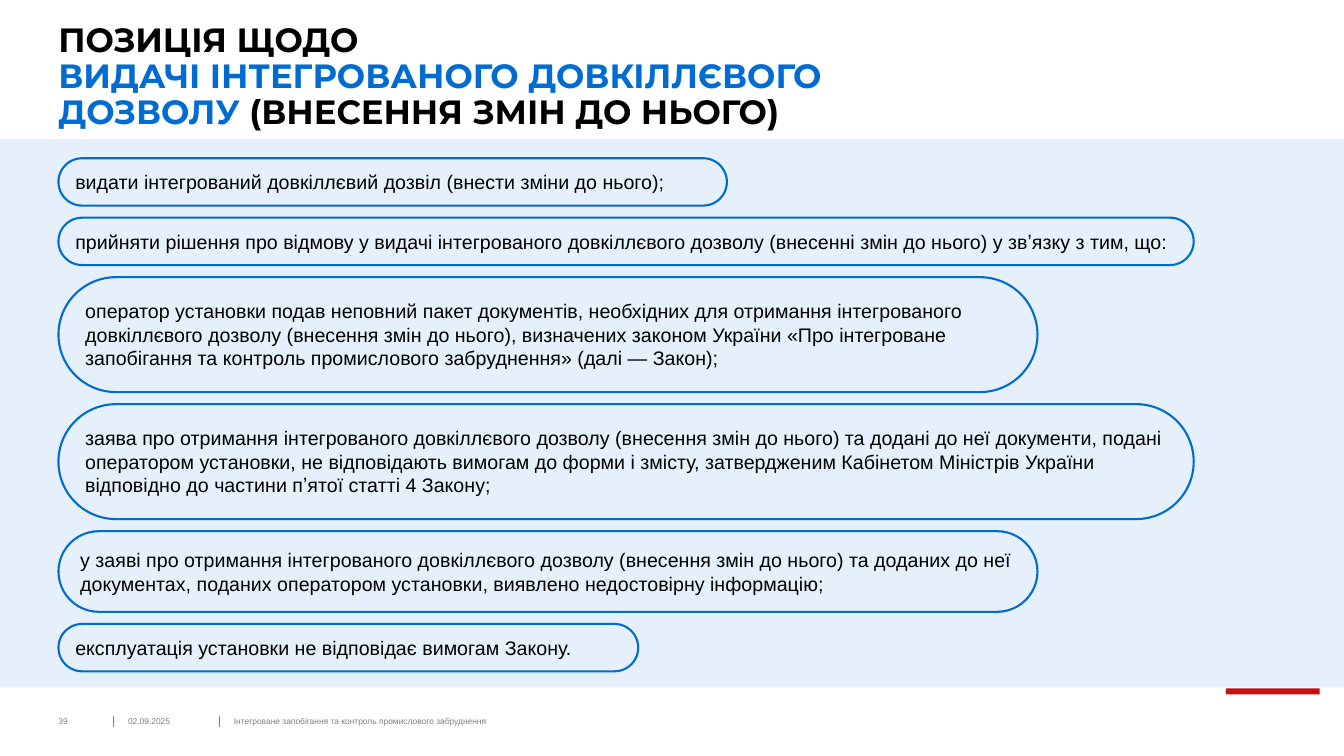
import pptx
import pptx.util
import pptx.dml.color
import pptx.enum.shapes
import pptx.enum.text
from dataclasses import dataclass
from lxml import etree
from pptx.util import Inches, Pt

SHAPE = pptx.enum.shapes.MSO_SHAPE
ANCHOR = pptx.enum.text.MSO_ANCHOR
ALIGN = pptx.enum.text.PP_ALIGN


@dataclass(frozen=True)
class Theme:
    """Colours, fonts and type sizes of the slide."""
    ink: str = "000000"
    blue: str = "006CD2"
    pale: str = "E5F0FA"
    red: str = "C80F0F"
    grey: str = "7F7F7F"
    heading_font: str = "Montserrat"
    body_font: str = "Arial"
    heading_size: int = 24
    body_size: int = 14
    footer_size: int = 6


THEME = Theme()
MARGIN = 0.58
BAND = (0, 1.38, 13.33, 5.44)
DECISION_GAP = 0.12
DECISIONS = [
    (6.63, 0.47, "видати інтегрований довкіллєвий дозвіл (внести зміни до нього);"),
    (11.26, 0.47, "прийняти рішення про відмову у видачі інтегрованого довкіллєвого дозволу "
                  "(внесенні змін до нього) у звʼязку з тим, що:"),
    (9.71, 1.14, "оператор установки подав неповний пакет документів, необхідних для отримання "
                 "інтегрованого довкіллєвого дозволу (внесення змін до нього), визначених законом "
                 "України «Про інтегроване запобігання та контроль промислового забруднення» "
                 "(далі — Закон);"),
    (11.26, 1.14, "заява про отримання інтегрованого довкіллєвого дозволу (внесення змін до нього) "
                  "та додані до неї документи, подані оператором установки, не відповідають вимогам "
                  "до форми і змісту, затвердженим Кабінетом Міністрів України відповідно до частини "
                  "пʼятої статті 4 Закону;"),
    (9.71, 0.8, "у заяві про отримання інтегрованого довкіллєвого дозволу (внесення змін до нього) "
                "та доданих до неї документах, поданих оператором установки, виявлено недостовірну "
                "інформацію;"),
    (5.75, 0.47, "експлуатація установки не відповідає вимогам Закону."),
]
FOOTER = [
    (0, 0.51, "39"),
    (0.69, 0.79, "02.09.2025"),
    (1.74, 7.48, "Інтегроване запобігання та контроль промислового забруднення"),
]
DIVIDER_OFFSETS = (0.55, 1.6)


def rgb(value):
    """Turn a hex string into a colour."""
    return pptx.dml.color.RGBColor.from_string(value)


def set_font(font, name, size, colour=None):
    """Apply a typeface, size and optional colour."""
    font.name, font.size = name, Pt(size)
    if colour:
        font.color.rgb = rgb(colour)


def add_bar(slide, box, colour):
    """Draw a plain filled rectangle."""
    bar = slide.shapes.add_shape(SHAPE.RECTANGLE, *map(Inches, box))
    bar.shadow.inherit = False
    bar.fill.solid()
    bar.fill.fore_color.rgb = rgb(colour)
    bar.line.fill.background()


def add_frame(slide, box, anchor):
    """Add a wrapping text box without insets and return its frame."""
    frame = slide.shapes.add_textbox(*map(Inches, box)).text_frame
    frame.word_wrap = True
    frame.vertical_anchor = anchor
    frame.margin_left = frame.margin_right = frame.margin_top = frame.margin_bottom = 0
    return frame


def add_heading(slide, box):
    """Write the two-colour heading."""
    heading = add_frame(slide, box, ANCHOR.BOTTOM).paragraphs[0]
    heading.line_spacing = 0.9
    set_font(heading.font, THEME.heading_font, THEME.heading_size)
    heading.font.bold = True
    opening = heading.add_run()
    opening.text = "ПОЗИЦІЯ ЩОДО"
    opening.font.color.rgb = rgb(THEME.ink)
    heading.add_line_break()
    for words, colour in (("ВИДАЧІ ІНТЕГРОВАНОГО ДОВКІЛЛЄВОГО ДОЗВОЛУ ", THEME.blue),
                          ("(ВНЕСЕННЯ ЗМІН ДО НЬОГО)", THEME.ink)):
        part = heading.add_run()
        part.text = words
        part.font.color.rgb = rgb(colour)


def add_decisions(slide, left, top):
    """Stack the outlined decision pills with an equal gap."""
    for width, height, wording in DECISIONS:
        pill = slide.shapes.add_shape(SHAPE.ROUNDED_RECTANGLE,
                                      *map(Inches, (left, top, width, height)))
        pill.adjustments[0] = 0.5
        pill.shadow.inherit = False
        pill.fill.background()
        pill.line.color.rgb = rgb(THEME.blue)
        pill.line.width = Pt(1.5)
        pill.text_frame.word_wrap = True
        pill.text_frame.vertical_anchor = ANCHOR.MIDDLE
        decision = pill.text_frame.paragraphs[0]
        decision.text = wording
        decision.alignment = ALIGN.LEFT
        set_font(decision.font, THEME.body_font, THEME.body_size, THEME.ink)
        top += height + DECISION_GAP


def add_footer(slide, left, top):
    """Write the page number, date and topic with dividers between them."""
    for offset in DIVIDER_OFFSETS:
        x = Inches(left + offset)
        divider = slide.shapes.add_connector(pptx.enum.shapes.MSO_CONNECTOR.STRAIGHT,
                                             x, Inches(top), x, Inches(top + 0.11))
        divider.line.color.rgb = rgb(THEME.grey)
        divider.line.width = Pt(0.75)
        etree.SubElement(divider.element.spPr, pptx.oxml.ns.qn("a:effectLst"))
    for offset, width, wording in FOOTER:
        note = add_frame(slide, (left + offset, top, width, 0.1), ANCHOR.MIDDLE).paragraphs[0]
        note.text = wording
        set_font(note.font, THEME.body_font, THEME.footer_size, THEME.grey)


def main():
    """Build the slide and save it."""
    deck = pptx.Presentation()
    deck.slide_width, deck.slide_height = Inches(13.33), Inches(7.5)
    slide = deck.slides.add_slide(deck.slide_layouts[6])
    add_bar(slide, (12.16, 6.83, 0.93, 0.06), THEME.red)
    add_bar(slide, BAND, THEME.pale)
    add_heading(slide, (MARGIN, 0.21, 8.03, 1.1))
    add_decisions(slide, MARGIN, BAND[1] + 0.19)
    add_footer(slide, MARGIN, 7.1)
    deck.save("out.pptx")


if __name__ == "__main__":
    main()
